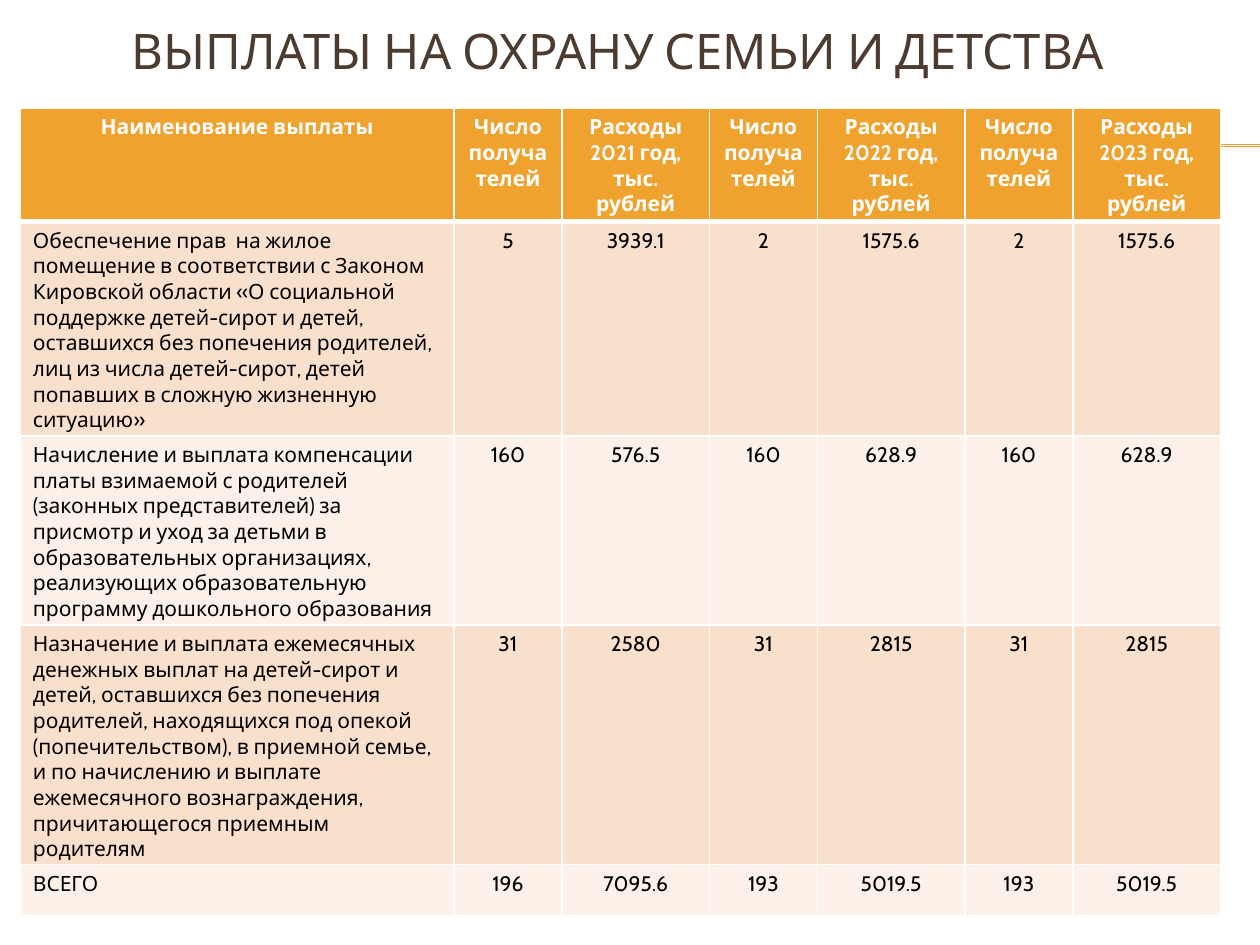
"""Build a one-slide table of family and childhood protection payments."""
import lxml.etree
import pptx
import pptx.dml.color
import pptx.enum.shapes
import pptx.enum.text
import pptx.oxml.ns
import pptx.util

Cm = pptx.util.Cm
Pt = pptx.util.Pt
ALIGN = pptx.enum.text.PP_ALIGN
qn = pptx.oxml.ns.qn

FONT = "Cabin"
COLOURS = {
    "accent": "F0A22E",
    "title": "4E3B30",
    "odd": "F9E0CD",
    "even": "FCF0E8",
    "text": "000000",
    "white": "FFFFFF",
}
YEARS = (2021, 2022, 2023)
NAME_WIDTH, COUNT_WIDTH, COST_WIDTH = 8.74, 2.18, 2.97
HEADER_HEIGHT, ROW_HEIGHT = 1.78, 1.04
PAYMENTS = [
    ("Обеспечение прав  на жилое помещение в соответствии с Законом Кировской "
     "области «О социальной поддержке детей-сирот и детей, оставшихся без "
     "попечения родителей, лиц из числа детей-сирот, детей попавших в сложную "
     "жизненную ситуацию»",
     "5", "3939.1", "2", "1575.6", "2", "1575.6"),
    ("Начисление и выплата компенсации платы взимаемой с родителей (законных "
     "представителей) за присмотр и уход за детьми в образовательных "
     "организациях, реализующих образовательную программу дошкольного образования",
     "160", "576.5", "160", "628.9", "160", "628.9"),
    ("Назначение и выплата ежемесячных денежных выплат на детей-сирот и детей, "
     "оставшихся без попечения родителей, находящихся под опекой "
     "(попечительством), в приемной семье, и по начислению и выплате "
     "ежемесячного вознаграждения, причитающегося приемным родителям",
     "31", "2580", "31", "2815", "31", "2815"),
    ("ВСЕГО", "196", "7095.6", "193", "5019.5", "193", "5019.5"),
]


def colour(name):
    return pptx.dml.color.RGBColor.from_string(COLOURS[name])


def write(frame, text, size, ink, align, bold=False):
    para = frame.paragraphs[0]
    para.text = text
    para.alignment = align
    para.font.name = FONT
    para.font.size = Pt(size)
    para.font.bold = bold
    para.font.color.rgb = colour(ink)


def add_title(page, text):
    box = page.shapes.add_textbox(Cm(0.79), Cm(0), Cm(23.34), Cm(2))
    frame = box.text_frame
    frame.word_wrap = True
    frame.vertical_anchor = pptx.enum.text.MSO_ANCHOR.MIDDLE
    write(frame, text, 28, "title", ALIGN.CENTER)


def add_rule(page, top):
    rule = page.shapes.add_connector(
        pptx.enum.shapes.MSO_CONNECTOR.STRAIGHT, Cm(1.42), Cm(top), Cm(25.4), Cm(top))
    rule.line.color.rgb = colour("accent")
    rule.line.width = Pt(0.75)
    lxml.etree.SubElement(rule._element.spPr, qn("a:effectLst"))


def set_borders(cell, top, bottom):
    properties = cell._tc.get_or_add_tcPr()
    for side, width in (("L", 1), ("R", 1), ("T", top), ("B", bottom)):
        border = lxml.etree.SubElement(properties, qn(f"a:ln{side}"), w=str(Pt(width)))
        fill = lxml.etree.SubElement(border, qn("a:solidFill"))
        lxml.etree.SubElement(fill, qn("a:srgbClr"), val=COLOURS["white"])


def fill_cell(cell, text, row, column):
    header = row == 0
    set_borders(cell, top=3 if row == 1 else 1, bottom=3 if header else 1)
    cell.fill.solid()
    cell.fill.fore_color.rgb = colour("accent" if header else "odd" if row % 2 else "even")
    align = ALIGN.LEFT if column == 0 and not header else ALIGN.CENTER
    write(cell.text_frame, text, 12, "white" if header else "text", align, header)


def add_payments(page):
    header = ["Наименование выплаты"]
    for year in YEARS:
        header += ["Число получателей", f"Расходы {year} год, тыс. рублей"]
    rows = [header, *PAYMENTS]
    widths = [NAME_WIDTH] + [COUNT_WIDTH, COST_WIDTH] * len(YEARS)
    heights = [HEADER_HEIGHT] + [ROW_HEIGHT] * len(PAYMENTS)
    table = page.shapes.add_table(
        len(rows), len(widths), Cm(0.41), Cm(2.18), Cm(sum(widths)), Cm(sum(heights))).table
    for column, width in zip(table.columns, widths):
        column.width = Cm(width)
    for row, height in zip(table.rows, heights):
        row.height = Cm(height)
    for row, texts in enumerate(rows):
        for column, text in enumerate(texts):
            fill_cell(table.cell(row, column), text, row, column)


def main():
    deck = pptx.Presentation()
    deck.slide_width, deck.slide_height = Cm(25.4), Cm(19.05)
    page = deck.slides.add_slide(deck.slide_layouts[6])
    for top in (2.92, 2.95):
        add_rule(page, top)
    add_title(page, "ВЫПЛАТЫ НА ОХРАНУ СЕМЬИ И ДЕТСТВА")
    add_payments(page)
    deck.save("out.pptx")


if __name__ == "__main__":
    main()
